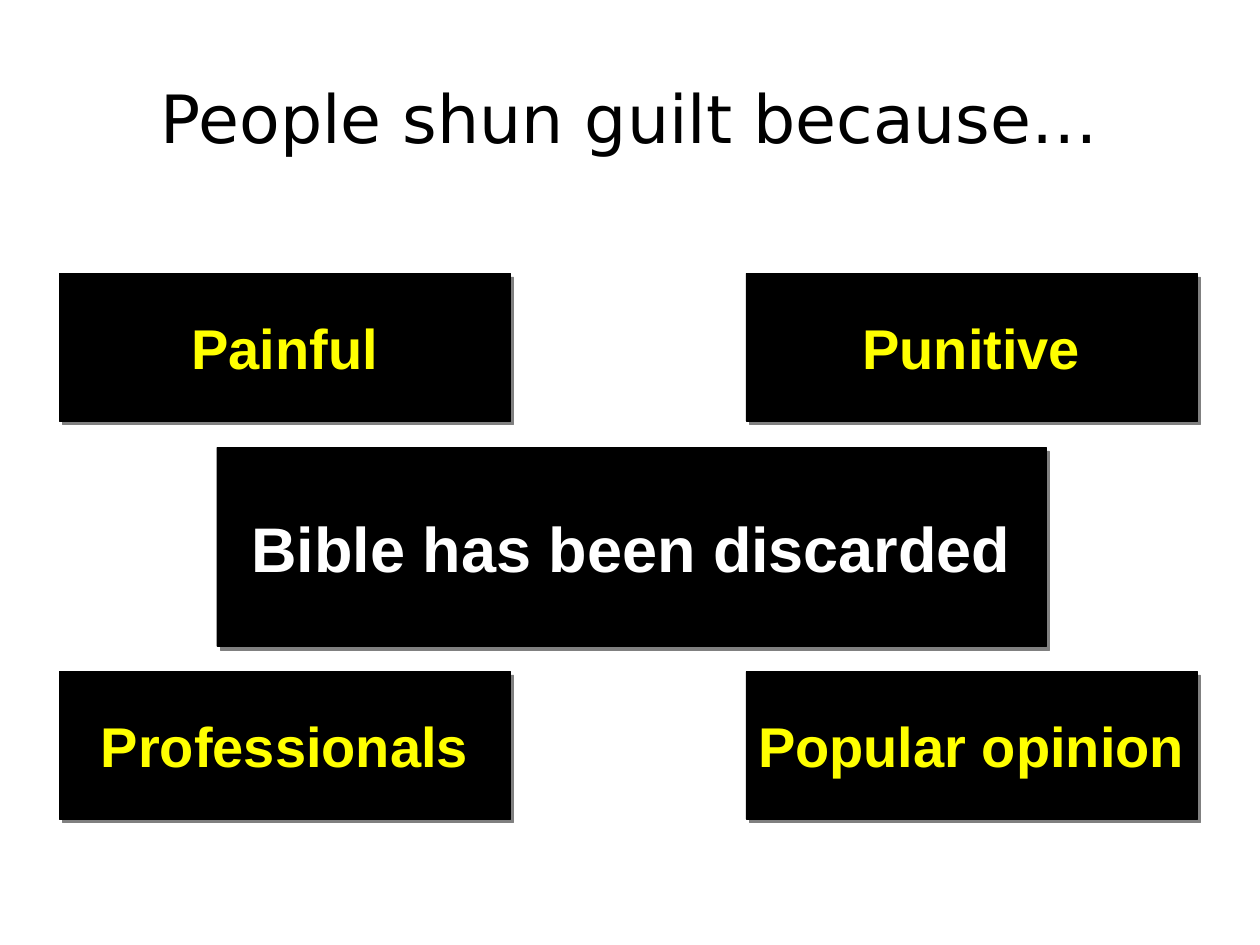
from lxml import etree
from pptx import Presentation
from pptx import util as u
from pptx.dml.color import RGBColor
from pptx.enum import shapes, text
from pptx.oxml import ns

# Content
TITLE = "People shun guilt because…"
CAUSES = [["Painful", "Punitive"], ["Professionals", "Popular opinion"]]
CORE = "Bible has been discarded"

# Layout in inches
LEFT, TOP = 0.47, 2.17
WIDE, HIGH = 3.58, 1.17
STEP_X, STEP_Y = 5.45, 3.16


def color(code):
    return RGBColor.from_string(code)


def write(frame, words, size, font, code, bold=False):
    frame.vertical_anchor = text.MSO_ANCHOR.MIDDLE
    para = frame.paragraphs[0]
    para.alignment = text.PP_ALIGN.CENTER
    run = para.add_run()
    run.text = words
    run.font.size = u.Pt(size)
    run.font.name = font
    run.font.bold = bold
    run.font.color.rgb = color(code)


def add_shadow(shape):
    shape.shadow.inherit = False
    effects = shape._element.spPr.find(ns.qn("a:effectLst"))
    outer = etree.SubElement(effects, ns.qn("a:outerShdw"), blurRad="0",
                             dist=str(u.Pt(2.8)), dir="2700000",
                             algn="ctr", rotWithShape="0")
    etree.SubElement(outer, ns.qn("a:srgbClr"), val="808080")


def add_box(slide, words, place, size, code):
    box = slide.shapes.add_shape(shapes.MSO_SHAPE.RECTANGLE,
                                 *map(u.Inches, place))
    box.fill.solid()
    box.fill.fore_color.rgb = color("000000")
    box.line.color.rgb = color("000000")
    box.line.width = u.Pt(0.25)
    add_shadow(box)
    box.text_frame.word_wrap = False
    write(box.text_frame, words, size, "Arial", code, bold=True)


def main():
    prs = Presentation()
    prs.slide_width, prs.slide_height = u.Inches(10), u.Inches(7.5)
    slide = prs.slides.add_slide(prs.slide_layouts[5])

    # Title
    title = slide.shapes.title
    title.left, title.top = u.Inches(0.5), u.Inches(0.3)
    title.width, title.height = u.Inches(9), u.Inches(1.25)
    write(title.text_frame, TITLE, 38, "DejaVu Sans", "000000")

    # Causes in the corners, core reason between the rows
    for row, names in enumerate(CAUSES):
        if row == 1:
            add_box(slide, CORE, (1.72, 3.55, 6.58, 1.58), 36, "FFFFFF")
        for col, name in enumerate(names):
            place = (LEFT + col * STEP_X, TOP + row * STEP_Y, WIDE, HIGH)
            add_box(slide, name, place, 32, "FFFF00")

    prs.save("out.pptx")


if __name__ == "__main__":
    main()
